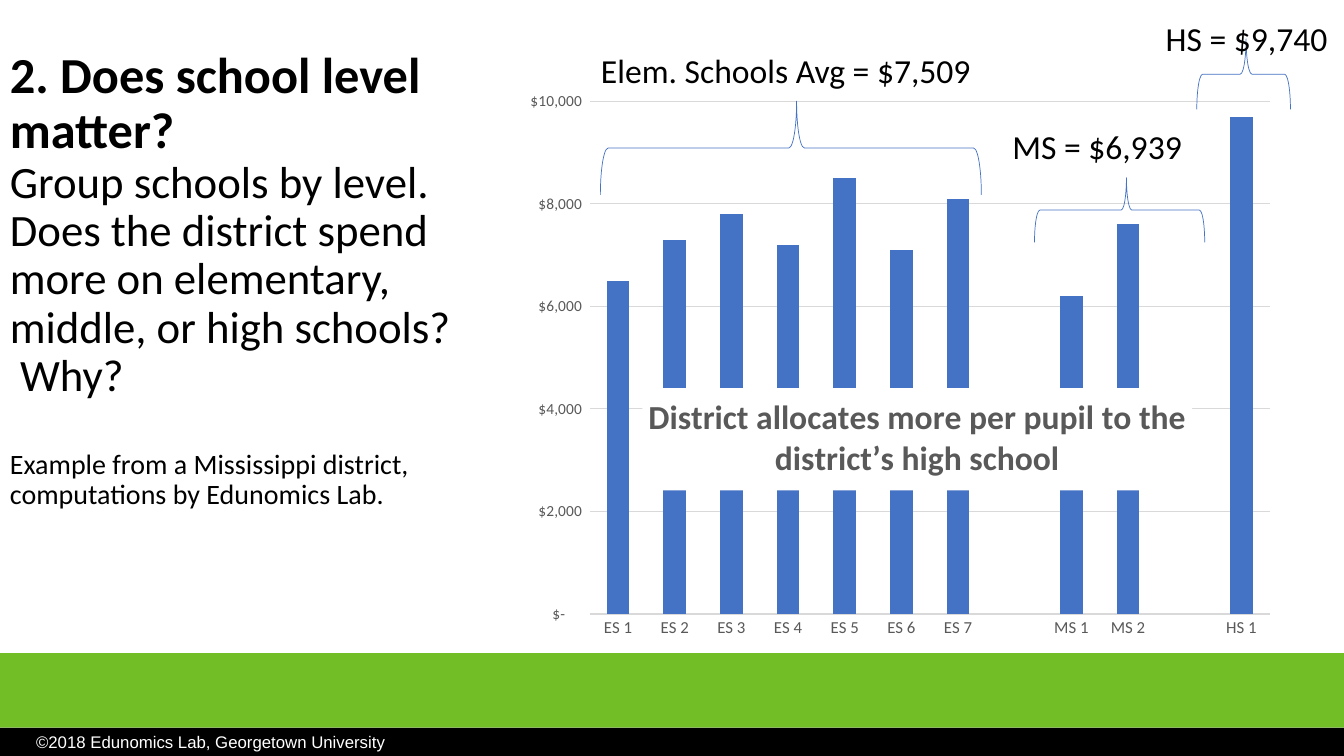
from lxml.etree import SubElement
from pptx import Presentation
from pptx.chart.data import CategoryChartData
from pptx.dml.color import RGBColor
from pptx.enum.chart import XL_CHART_TYPE as CT, XL_TICK_MARK as TM
from pptx.enum.shapes import MSO_SHAPE as SH
from pptx.enum.text import MSO_ANCHOR as MA, PP_ALIGN as PA
from pptx.oxml.ns import qn
from pptx.util import Cm, Pt

WIDTH, HEIGHT = 33.87, 19.05
BLUE, GREEN, GRID, GREY = "4472C4", "72BE26", "D9D9D9", "595959"
MONEY = '_("$"* #,##0_);_("$"* \\(#,##0\\);_("$"* "-"??_);_(@_)'
SPENDING = [("ES 1", 6500), ("ES 2", 7300), ("ES 3", 7800), ("ES 4", 7200),
            ("ES 5", 8500), ("ES 6", 7100), ("ES 7", 8100), ("", None),
            ("MS 1", 6200), ("MS 2", 7600), ("", None), ("HS 1", 9700)]
QUESTION = [
    ("2. Does school level matter?", 36, True, 0),
    ("Group schools by level. Does the district spend more on elementary, "
     "middle, or high schools?  Why?", 32, False, 0),
    ("Example from a Mississippi district, computations by Edunomics Lab.",
     20, False, 35),
]
# Brace box, label, label offset from the brace's top centre, brace point
LEVELS = [
    ((15.13, 2.55, 9.6, 2.36), "Elem. Schools Avg = $7,509 ", (-0.03, -1.41), 0.485),
    ((30.16, 0.98, 2.36, 1.78), "HS = $9,740 ", (0.17, -0.65), 0.474),
    ((26.07, 4.48, 4.29, 1.63), "MS = $6,939 ", (-0.47, -1.43), 0.46),
]


def rgb(hex_color):
    return RGBColor.from_string(hex_color)


def set_font(font, size, color="000000", bold=False, name="Calibri"):
    values = {"size": Pt(size), "bold": bold, "name": name}
    for key, value in values.items():
        setattr(font, key, value)
    font.color.rgb = rgb(color)


def add_text(s, box, paragraphs, align=PA.LEFT, **font):
    """Each paragraph is (text, size, bold, space before)."""
    tf = s.shapes.add_textbox(*map(Cm, box)).text_frame
    tf.word_wrap = True
    for i, (text, size, bold, before) in enumerate(paragraphs):
        p = tf.add_paragraph() if i else tf.paragraphs[0]
        p.alignment = align
        if before:
            p.space_before = Pt(before)
        r = p.add_run()
        r.text = text
        set_font(r.font, size, bold=bold, **font)
    return tf


def add_question(s, box):
    tf = add_text(s, box, QUESTION)
    tf.vertical_anchor = MA.MIDDLE
    tf.margin_bottom = Cm(1.5)
    for p in tf.paragraphs:
        p.line_spacing = 0.9


def add_footer(s, box):
    x, y, w, h = box
    band = 1.88
    for top, height, color in ((y, band, GREEN), (y + band, h - band, "000000")):
        sp = s.shapes.add_shape(SH.RECTANGLE, *map(Cm, (x, top, w, height)))
        sp.shadow.inherit = False
        sp.fill.solid()
        sp.fill.fore_color.rgb = rgb(color)
        sp.line.fill.background()
    add_text(s, (x + 0.66, y + band - 0.03, 15.7, 0.76),
             [("©2018 Edunomics Lab, Georgetown University", 12, False, 0)],
             color="FFFFFF", name="Arial")


def set_layout(parent, **values):
    """Fill the layout element of a plot area or title."""
    layout = parent.find(qn("c:layout"))
    if layout is None:
        layout = SubElement(parent, qn("c:layout"))
        parent.remove(layout)
        text = parent.find(qn("c:tx"))
        parent.insert(0 if text is None else 1, layout)
    manual = SubElement(layout, qn("c:manualLayout"))
    for tag, value in values.items():
        SubElement(manual, qn("c:" + tag)).set("val", str(value))


def add_title(chart, text):
    title = chart.chart_title
    r = title.text_frame.paragraphs[0].add_run()
    r.text = text
    set_font(r.font, 24, GREY, True)
    title.format.fill.solid()
    title.format.fill.fore_color.rgb = rgb("FFFFFF")
    el = chart._chartSpace.chart.find(qn("c:title"))
    set_layout(el, xMode="edge", yMode="edge", x=0.21, y=0.6)
    overlay = el.find(qn("c:overlay"))
    if overlay is None:
        overlay = SubElement(el, qn("c:overlay"))
        el.find(qn("c:layout")).addnext(overlay)
    overlay.set("val", "1")


def add_spending_chart(s, box):
    data = CategoryChartData()
    data.categories = [name for name, _ in SPENDING]
    data.add_series("Series 1", [value for _, value in SPENDING])
    chart = s.shapes.add_chart(CT.COLUMN_STACKED, *map(Cm, box), data).chart
    chart.has_legend = False
    set_font(chart.font, 10)
    add_title(chart, "District allocates more per pupil to the district’s high school")
    set_layout(chart._chartSpace.chart.plotArea, layoutTarget="inner",
               xMode="edge", yMode="edge", x=0.146, y=0.167, w=0.828, h=0.774)

    # Columns
    plot = chart.plots[0]
    for key, value in {"gap_width": 150, "overlap": 100,
                       "vary_by_categories": False}.items():
        setattr(plot, key, value)
    fill = plot.series[0].format.fill
    fill.solid()
    fill.fore_color.rgb = rgb(BLUE)

    # Axes
    cat, val = chart.category_axis, chart.value_axis
    for axis, size in ((cat, 12), (val, 11)):
        axis.major_tick_mark = axis.minor_tick_mark = TM.NONE
        set_font(axis.tick_labels.font, size, GREY)
    for key, value in {"minimum_scale": 0, "maximum_scale": 10000, "major_unit": 2000,
                       "has_major_gridlines": True}.items():
        setattr(val, key, value)
    val.tick_labels.number_format = MONEY
    val.tick_labels.number_format_is_linked = False
    val.format.line.fill.background()
    for line in (cat.format.line, val.major_gridlines.format.line):
        line.color.rgb = rgb(GRID)
        line.width = Pt(0.75)


def add_level(s, box, label, offset, point):
    """Brace that fills the box, with its label centred above."""
    x, y, w, h = box
    cx, cy = x + w / 2, y + h / 2
    sp = s.shapes.add_shape(SH.LEFT_BRACE, *map(Cm, (cx - h / 2, cy - w / 2, h, w)))
    sp.rotation = 90
    sp.shadow.inherit = False
    sp.adjustments[0], sp.adjustments[1] = 0.083, point
    sp.fill.background()
    sp.line.color.rgb = rgb(BLUE)
    sp.line.width = Pt(0.5)
    dx, dy = offset
    label_w = 10.9
    add_text(s, (cx + dx - label_w / 2, y + dy, label_w, 1.27),
             [(label, 24, False, 0)], PA.CENTER)


def main():
    prs = Presentation()
    prs.slide_width, prs.slide_height = Cm(WIDTH), Cm(HEIGHT)
    s = prs.slides.add_slide(prs.slide_layouts[6])
    add_question(s, (0, -0.23, 11.84, 15.98))
    add_footer(s, (0, 16.46, WIDTH, HEIGHT - 16.46))
    add_spending_chart(s, (11.84, -0.23, 20.7, 16.69))
    for level in LEVELS:
        add_level(s, *level)
    prs.save("out.pptx")


if __name__ == "__main__":
    main()
